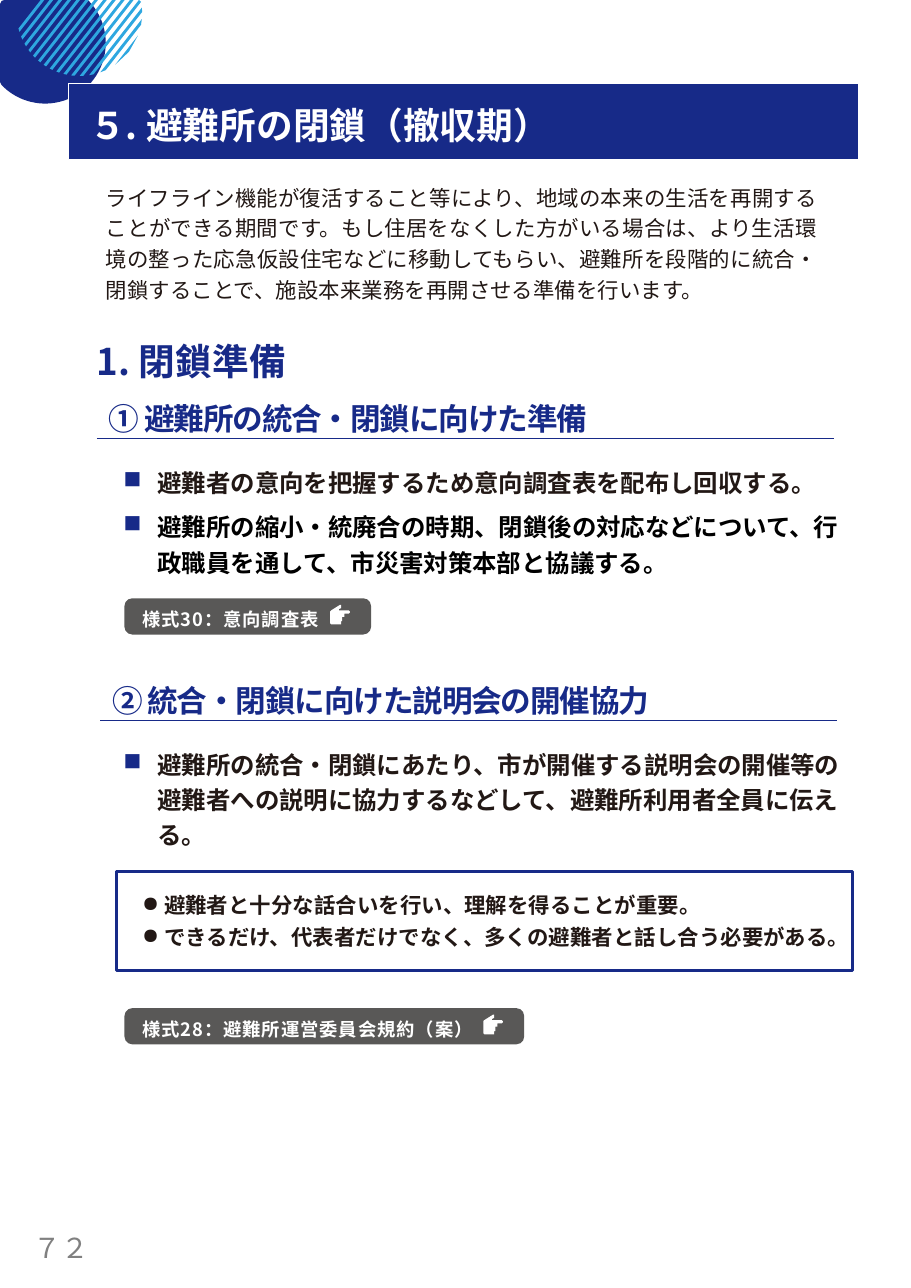
import math
from lxml import etree
from pptx import Presentation
from pptx.dml.color import RGBColor
from pptx.enum.shapes import MSO_CONNECTOR, MSO_SHAPE
from pptx.enum.text import MSO_ANCHOR, MSO_AUTO_SIZE, PP_ALIGN
from pptx.oxml.ns import qn
from pptx.util import Inches, Pt

LEFT, CENTER, JUSTIFY = PP_ALIGN.LEFT, PP_ALIGN.CENTER, PP_ALIGN.JUSTIFY
TOP, NO_FIT = MSO_ANCHOR.TOP, MSO_AUTO_SIZE.NONE
RECT, ROUNDED = MSO_SHAPE.RECTANGLE, MSO_SHAPE.ROUNDED_RECTANGLE
STRAIGHT = MSO_CONNECTOR.STRAIGHT

C = {"navy": "172A88", "sky": "2EA7E0", "ink": "221815", "black": "000000",
     "tag": "595857", "white": "FFFFFF", "page": "808080"}
FONT = "Noto Sans CJK JP"
WIDTH, HEIGHT = Inches(8.27), Inches(11.69)
COL, ROW = WIDTH / 100, HEIGHT / 100
BULLET_X = 13.3
HAND = [(9, 0), (1, 5), (0, 6), (0, 17), (1, 18), (10, 18), (10, 15), (11, 15),
        (11, 11), (13, 11), (13, 8), (17, 8), (18, 7), (18, 6), (17, 5),
        (8, 5), (8, 4), (10, 3), (10, 0)]


def rgb(name):
    return RGBColor.from_string(C[name])


def grid(x, y, w, h):
    return [round(v) for v in (x * COL, y * ROW, w * COL, h * ROW)]


def paint(sp, fill=None, line=None, width=0.75):
    if fill:
        sp.fill.solid()
        sp.fill.fore_color.rgb = rgb(fill)
    else:
        sp.fill.background()
    if line:
        sp.line.color.rgb = rgb(line)
        sp.line.width = Pt(width)
    else:
        sp.line.fill.background()


def setup_frame(tf, left=0, top=0.01, wrap=True):
    tf.word_wrap = wrap
    tf.auto_size = NO_FIT
    tf.vertical_anchor = TOP
    tf.margin_left, tf.margin_top = Inches(left), Inches(top)
    tf.margin_right = tf.margin_bottom = 0


def write(p, text, size=16, color="ink", bold=True, font=FONT, align=LEFT,
          leading=1.0, before=0, after=0, track=0, left=0, hang=0,
          bullet=None, bullet_color=None):
    p.alignment, p.line_spacing = align, leading
    p.space_before, p.space_after = Pt(before), Pt(after)
    pPr = p._p.get_or_add_pPr()
    pPr.set("marL", str(Inches(left)))
    pPr.set("indent", str(-Inches(hang)))
    if bullet_color:
        clr = etree.SubElement(pPr, qn("a:buClr"))
        etree.SubElement(clr, qn("a:srgbClr"), val=C[bullet_color])
    if bullet:
        etree.SubElement(pPr, qn("a:buChar"), char=bullet)
    r = p.add_run()
    r.text = text
    r.font.size, r.font.bold, r.font.name = Pt(size), bold, font
    r.font.color.rgb = rgb(color)
    rPr = r._r.get_or_add_rPr()
    if track:
        rPr.set("spc", str(round(track * 100)))
    etree.SubElement(rPr, qn("a:ea"), typeface=font)


def text_box(s, box, text, **fmt):
    tf = s.shapes.add_textbox(*grid(*box)).text_frame
    setup_frame(tf)
    write(tf.paragraphs[0], text, **fmt)


def write_list(tf, items, **fmt):
    for i, (text, color) in enumerate(items):
        p = tf.add_paragraph() if i else tf.paragraphs[0]
        write(p, text, color=color, **fmt)


def outline(s, contours, fill):
    (start, *rest), *others = contours
    fb = s.shapes.build_freeform(*map(round, start), scale=1.0)
    fb.add_line_segments([tuple(map(round, pt)) for pt in rest], close=True)
    for first, *tail in others:
        fb.move_to(*map(round, first))
        fb.add_line_segments([tuple(map(round, pt)) for pt in tail], close=True)
    sp = fb.convert_to_shape()
    sp.shadow.inherit = False
    paint(sp, fill)


def corner_disc(s, cx, cy, radius):
    turns = [math.radians(a) for a in range(0, 360, 4)]
    outline(s, [[(max(0, cx + radius * math.cos(t)) * COL,
                  max(0, cy + radius * math.sin(t)) * COL) for t in turns]], "navy")


def striped_disc(s, cx, cy, radius, first=4.47, step=0.98, thick=0.4, count=15):
    slant = 0.78

    def chord(x0):
        dx, q = x0 - cx, 1 + slant ** 2
        half = slant * dx + cy
        root = math.sqrt(max(0, half ** 2 - q * (dx ** 2 + cy ** 2 - radius ** 2)))
        ys = max(0, (half - root) / q), (half + root) / q
        return [((x0 - slant * y) * COL, y * COL) for y in ys]

    edges = [first + i * step for i in range(count)]
    outline(s, [chord(e) + chord(e + thick)[::-1] for e in edges], "sky")


def title_bar(s, box, text):
    sp = s.shapes.title
    sp.left, sp.top, sp.width, sp.height = grid(*box)
    sp._element.getparent().append(sp._element)
    paint(sp, "navy", "white")
    setup_frame(sp.text_frame, left=0.18, top=0.17)
    write(sp.text_frame.paragraphs[0], text, size=24, color="white",
          before=1, left=0.01)


def section(s, box, heading, items):
    x, y, w, h = box
    rule_y = y + 3.08
    ends = grid(x, rule_y, x + w, rule_y)
    rule = s.shapes.add_connector(STRAIGHT, *ends)
    rule.line.color.rgb, rule.line.width = rgb("navy"), Pt(1.04)
    etree.SubElement(rule._element.spPr, qn("a:effectLst"))
    text_box(s, (x + 1.21, y, w - 1.21, 3), heading, size=20, color="navy",
             before=1, track=-0.8, left=0.01)
    tf = s.shapes.add_textbox(*grid(BULLET_X, y + 4.83, w, h - 4.83)).text_frame
    setup_frame(tf)
    write_list(tf, items, leading=1.2, after=6, left=0.33, hang=0.31,
               bullet="■", bullet_color="navy")


def note_frame(s, box, items):
    sp = s.shapes.add_shape(RECT, *grid(*box))
    sp.shadow.inherit = False
    paint(sp, line="navy", width=2.2)
    setup_frame(sp.text_frame, left=0.23, top=0.19)
    write_list(sp.text_frame, items, size=14, before=1, after=3,
               left=0.2, hang=0.2, bullet="●")


def form_tag(s, box, text):
    x, y, w, h = box
    sp = s.shapes.add_shape(ROUNDED, *grid(*box))
    sp.shadow.inherit = False
    sp.adjustments[0] = 0.22
    paint(sp, "tag")
    setup_frame(sp.text_frame, left=0.13, top=0.07, wrap=False)
    write(sp.text_frame.paragraphs[0], text, size=12, color="white",
          track=0.6, left=0.01)
    left, top = (x + w - 4.5) * COL, (y + 0.51) * ROW
    unit = 0.12 * COL
    outline(s, [[(left + a * unit, top + b * unit) for a, b in HAND]], "white")


def main():
    prs = Presentation()
    prs.slide_width, prs.slide_height = WIDTH, HEIGHT
    s = prs.slides.add_slide(prs.slide_layouts[5])
    corner_disc(s, 4.96, 4.72, 6.65)
    striped_disc(s, 8.71, 1.45, 6.89)
    title_bar(s, (7.5, 6.5, 86.7, 5.9), "５. 避難所の閉鎖（撤収期）")
    text_box(s, (10.64, 13.86, 79.08, 9.67),
             "ライフライン機能が復活すること等により、地域の本来の生活を再開することができる期間です。"
             "もし住居をなくした方がいる場合は、より生活環境の整った応急仮設住宅などに移動してもらい、"
             "避難所を段階的に統合・閉鎖することで、施設本来業務を再開させる準備を行います。",
             size=14, bold=False, align=JUSTIFY, leading=1.2, left=0.08)
    text_box(s, (10.64, 26.18, 53.8, 3.6), "1. 閉鎖準備", size=24, color="navy")
    section(s, (10.64, 30.97, 80.9, 13.85), "① 避難所の統合・閉鎖に向けた準備", [
        ("避難者の意向を把握するため意向調査表を配布し回収する。", "ink"),
        ("避難所の縮小・統廃合の時期、閉鎖後の対応などについて、"
         "行政職員を通して、市災害対策本部と協議する。", "black")])
    form_tag(s, (13.66, 46.45, 27.09, 2.82), "様式30：意向調査表")
    section(s, (11, 52.87, 80.9, 13.1), "② 統合・閉鎖に向けた説明会の開催協力", [
        ("避難所の統合・閉鎖にあたり、市が開催する説明会の開催等の"
         "避難者への説明に協力するなどして、避難所利用者全員に伝える。", "ink")])
    note_frame(s, (12.82, 67.66, 80.77, 7.7), [
        ("避難者と十分な話合いを行い、理解を得ることが重要。", "ink"),
        ("できるだけ、代表者だけでなく、多くの避難者と話し合う必要がある。", "ink")])
    form_tag(s, (13.66, 78.27, 43.89, 2.82), "様式28：避難所運営委員会規約（案）")
    text_box(s, (1.8, 95.5, 9.8, 3.4), "７２", size=18, color="page",
             bold=False, font="Arial", align=CENTER)
    prs.save("out.pptx")


if __name__ == "__main__":
    main()
